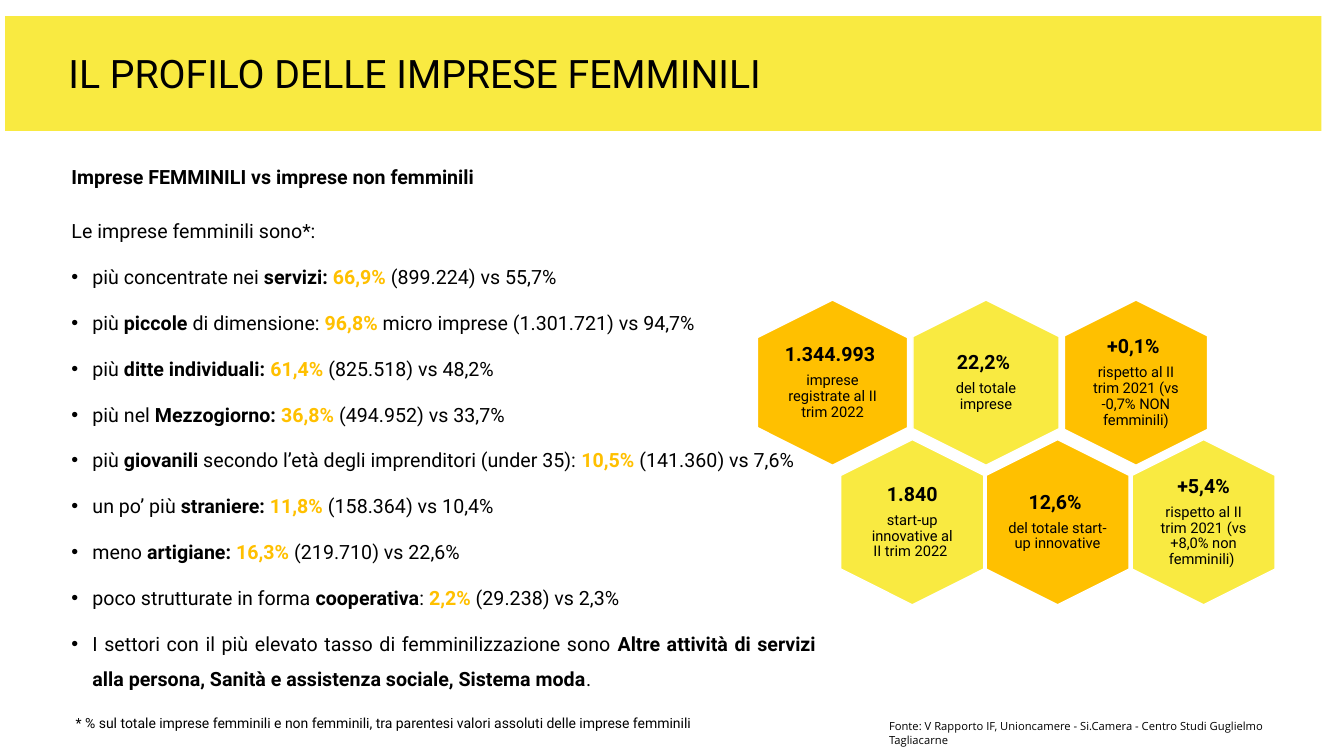
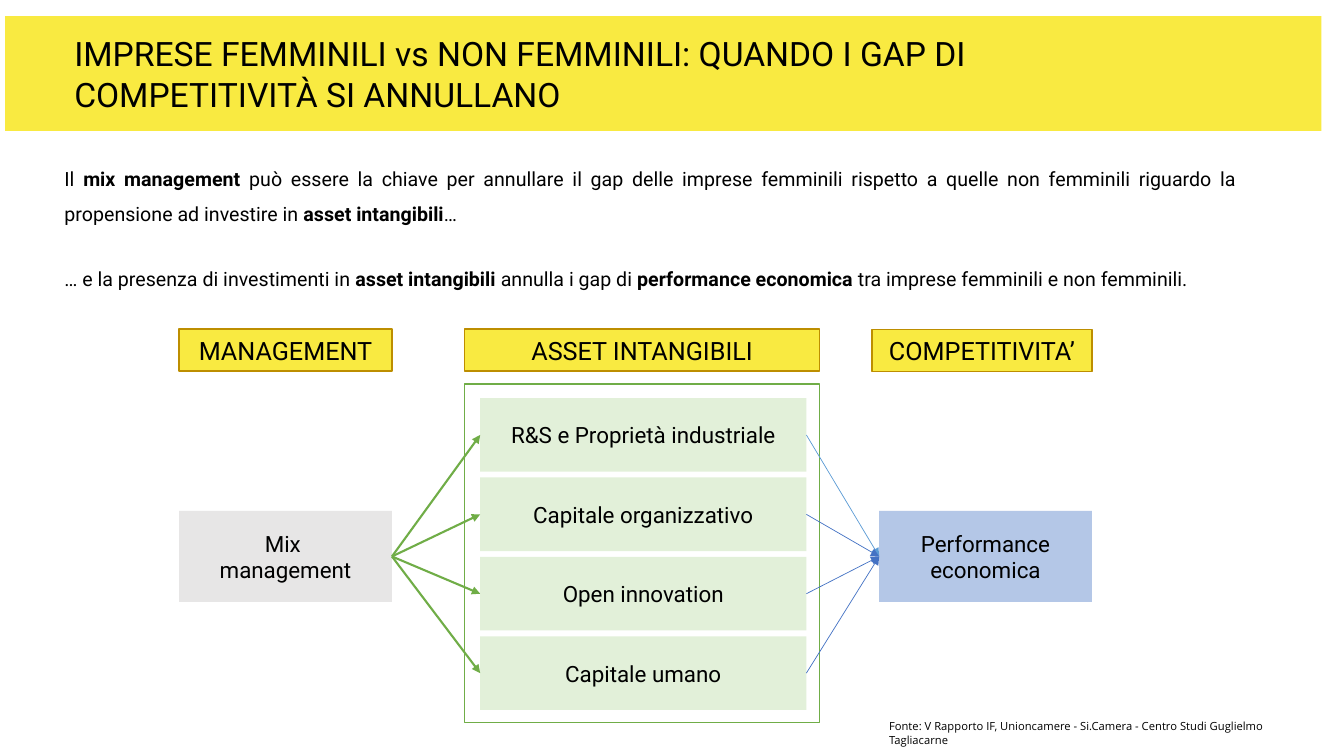
import pptx
import pptx.dml.color
import pptx.enum.shapes
import pptx.enum.text
import pptx.oxml
import pptx.util
from pptx.oxml.ns import qn

Pt = pptx.util.Pt
RGB = pptx.dml.color.RGBColor
SHAPE = pptx.enum.shapes.MSO_SHAPE
ALIGN = pptx.enum.text.PP_ALIGN
MIDDLE = pptx.enum.text.MSO_ANCHOR.MIDDLE

BLACK = RGB(0x00, 0x00, 0x00)
WHITE = RGB(0xFF, 0xFF, 0xFF)
YELLOW = RGB(0xF9, 0xEA, 0x41)
AMBER = RGB(0xFF, 0xC0, 0x00)
OCHRE = RGB(0xBD, 0x8E, 0x00)
GREEN = RGB(0x70, 0xAD, 0x47)
PALE_GREEN = RGB(0xE2, 0xF0, 0xD9)
GREY = RGB(0xE7, 0xE6, 0xE6)
PALE_BLUE = RGB(0xB4, 0xC7, 0xE7)
SKY = RGB(0x5B, 0x9B, 0xD5)
BLUE = RGB(0x44, 0x72, 0xC4)

# Run styles: (bold, colour)
PLAIN, BOLD, FIGURE = (False, BLACK), (True, BLACK), (True, AMBER)


def add_box(s, x, y, w, h, kind=None, fill=None, line=None, margins=(7.2, 3.6)):
    """Add a shape of the given kind, or a text box when there is none."""
    if kind is None:
        sp = s.shapes.add_textbox(Pt(x), Pt(y), Pt(w), Pt(h))
    else:
        sp = s.shapes.add_shape(kind, Pt(x), Pt(y), Pt(w), Pt(h))
        sp.shadow.inherit = False
        if fill is None:
            sp.fill.background()
        else:
            sp.fill.solid()
            sp.fill.fore_color.rgb = fill
        if line is None:
            sp.line.fill.background()
        else:
            sp.line.color.rgb = line
            sp.line.width = Pt(1)
        sp.text_frame.vertical_anchor = MIDDLE
    tf = sp.text_frame
    tf.word_wrap = True
    tf.margin_left = tf.margin_right = Pt(margins[0])
    tf.margin_top = tf.margin_bottom = Pt(margins[1])
    return sp


def add_text(tf, size, *runs, align=ALIGN.LEFT, spacing=1.0, after=0, font="Roboto"):
    """Add a paragraph of (text, style) runs, using the empty first one if it is free."""
    p = tf.paragraphs[0] if not tf.paragraphs[0].runs else tf.add_paragraph()
    p.alignment = align
    p.line_spacing = spacing
    p.space_after = Pt(after)
    for text, (bold, color) in runs:
        r = p.add_run()
        r.text = text
        r.font.name = font
        r.font.size = Pt(size)
        r.font.bold = bold
        r.font.color.rgb = color
    return p


prs = pptx.Presentation()
prs.slide_width, prs.slide_height = Pt(960), Pt(540)

# Yellow band, title and source line on both slides
TITLES = [
    ("IL PROFILO DELLE IMPRESE FEMMINILI", 28, 41.8, 31.7),
    ("IMPRESE FEMMINILI vs NON FEMMINILI: QUANDO I GAP DI COMPETITIVITÀ SI ANNULLANO", 24, 46, 20.2),
]
SOURCE = "Fonte: V Rapporto IF, Unioncamere - Si.Camera - Centro Studi Guglielmo Tagliacarne"
for title, size, x, y in TITLES:
    s = prs.slides.add_slide(prs.slide_layouts[6])
    add_box(s, 3.6, 11.5, 940.3, 82, SHAPE.RECTANGLE, YELLOW)
    add_text(add_box(s, x, y, 828, 60).text_frame, size, (title, PLAIN))
    add_text(add_box(s, 628, 510.5, 316, 17).text_frame, 8, (SOURCE, PLAIN), font="Open Sans")
profile, gaps = prs.slides

# Slide 1: comparison list
s = profile
tf = add_box(s, 44, 113, 318, 24).text_frame
add_text(tf, 14, ("Imprese FEMMINILI vs imprese non femminili", BOLD), spacing=1.07)

BULLETS = [
    [("più concentrate nei ", PLAIN), ("servizi: ", BOLD), ("66,9% ", FIGURE),
     ("(899.224) vs 55,7%", PLAIN)],
    [("più ", PLAIN), ("piccole", BOLD), (" di dimensione: ", PLAIN), ("96,8%", FIGURE),
     (" micro imprese (1.301.721) vs 94,7%", PLAIN)],
    [("più ", PLAIN), ("ditte individuali: ", BOLD), ("61,4% ", FIGURE),
     ("(825.518) vs 48,2%", PLAIN)],
    [("più nel ", PLAIN), ("Mezzogiorno: ", BOLD), ("36,8% ", FIGURE),
     ("(494.952) vs 33,7%", PLAIN)],
    [("più ", PLAIN), ("giovanili", BOLD),
     (" secondo l’età degli imprenditori (under 35): ", PLAIN), ("10,5% ", FIGURE),
     ("(141.360) vs 7,6%", PLAIN)],
    [("un po’ più ", PLAIN), ("straniere: ", BOLD), ("11,8% ", FIGURE),
     ("(158.364) vs 10,4%", PLAIN)],
    [("meno ", PLAIN), ("artigiane: ", BOLD), ("16,3% ", FIGURE),
     ("(219.710) vs 22,6%", PLAIN)],
    [("poco strutturate in forma ", PLAIN), ("cooperativa", BOLD), (": ", PLAIN),
     ("2,2%", FIGURE), (" (29.238) vs 2,3%", PLAIN)],
    [("I settori con il più elevato tasso di femminilizzazione sono ", PLAIN),
     ("Altre attività di servizi alla persona, Sanità e assistenza sociale, Sistema moda", BOLD),
     (".", PLAIN)],
]
body = dict(align=ALIGN.JUSTIFY, spacing=1.5, after=7.5)
tf = add_box(s, 44, 144.7, 546, 387).text_frame
add_text(tf, 14, ("Le imprese femminili sono*:", PLAIN), **body)
for runs in BULLETS:
    p = add_text(tf, 14, *runs, **body)
    pPr = p._p.get_or_add_pPr()
    pPr.set("marL", str(Pt(15)))
    pPr.set("indent", str(-Pt(15)))
    bullet_font = pptx.oxml.parse_xml(
        '<a:buFont xmlns:a="http://schemas.openxmlformats.org/drawingml/2006/main" typeface="Arial"/>')
    pPr.append(bullet_font)
    pPr.append(pPr.makeelement(qn("a:buChar"), {"char": "•"}))
p = add_text(tf, 10, ("* % sul totale imprese femminili e non femminili, tra parentesi "
                      "valori assoluti delle imprese femminili", PLAIN), **body)
p.space_before = Pt(3.5)
p._p.get_or_add_pPr().set("marL", str(Pt(3)))

# Slide 1: honeycomb, (centre x, centre y, width, fill, figure, caption)
TOP_ROW, BOTTOM_ROW, HEX_HEIGHT = 273.3, 373, 118
HEXAGONS = [
    (594.7, TOP_ROW, 107.3, AMBER, "1.344.993 ", "imprese registrate al II trim 2022"),
    (704.3, TOP_ROW, 104.4, YELLOW, "22,2% ", "del totale imprese"),
    (811.4, TOP_ROW, 102.2, AMBER, "+0,1% ", "rispetto al II trim 2021 (vs -0,7% NON femminili)"),
    (651.6, BOTTOM_ROW, 102.2, YELLOW, "1.840", "start-up innovative al II trim 2022 "),
    (755.4, BOTTOM_ROW, 102.2, AMBER, "12,6% ", "del totale start-up innovative"),
    (859.7, BOTTOM_ROW, 102.2, YELLOW, "+5,4%", "rispetto al II trim 2021 (vs +8,0% non femminili) "),
]
for cx, cy, width, fill, figure, caption in HEXAGONS:
    sp = add_box(s, cx - HEX_HEIGHT / 2, cy - width / 2, HEX_HEIGHT, width, SHAPE.HEXAGON, fill, WHITE)
    sp.adjustments[0] = 0.25
    sp.rotation = 90
    inset = 4.3 if fill == YELLOW else 0
    sp = add_box(s, cx - 35.5, cy - 40.5, 71, 81, margins=(inset, inset))
    sp.text_frame.vertical_anchor = MIDDLE
    for text, size, style in ((figure, 14, BOLD), (caption, 10.5, PLAIN)):
        add_text(sp.text_frame, size, (text, style), align=ALIGN.CENTER, spacing=0.9, after=5)

# Slide 2: introduction
s = gaps
tf = add_box(s, 46, 111, 837.5, 102, margins=(0, 0)).text_frame
add_text(tf, 14, ("Il ", PLAIN), ("mix management ", BOLD),
         ("può essere la chiave per annullare il gap delle imprese femminili rispetto a quelle "
          "non femminili riguardo la propensione ad investire in ", PLAIN),
         ("asset intangibili", BOLD), ("…", PLAIN), **body)
p = add_text(tf, 14, ("… e la presenza di investimenti in ", PLAIN), ("asset intangibili ", BOLD),
             ("annulla i gap di ", PLAIN), ("performance economica ", BOLD),
             ("tra imprese femminili e non femminili.", PLAIN), align=ALIGN.JUSTIFY, after=7.5)
p.space_before = Pt(21.5)

# Slide 2: diagram
ASSETS = ["R&S e Proprietà industriale", "Capitale organizzativo", "Open innovation", "Capitale umano"]
ASSET_X, ASSET_W, ASSET_Y, ASSET_H, ASSET_STEP = 343, 233, 284.4, 52.6, 56.7
END_Y, END_W, END_H = 365, 152, 65
MIX_X, PERFORMANCE_X = 128, 628

add_box(s, 332, 274.3, 253.4, 242, SHAPE.RECTANGLE, line=GREEN)
BLOCKS = [
    (MIX_X, 235, END_W, 30, YELLOW, OCHRE, 18, ["MANAGEMENT"]),
    (332, 235, 253.4, 30, YELLOW, OCHRE, 18, ["ASSET INTANGIBILI"]),
    (623, 235.4, 157, 30, YELLOW, OCHRE, 18, ["COMPETITIVITA’"]),
    (MIX_X, END_Y, END_W, END_H, GREY, None, 16, ["Mix ", "management"]),
    (PERFORMANCE_X, END_Y, END_W, END_H, PALE_BLUE, None, 16, ["Performance economica"]),
]
for i, asset in enumerate(ASSETS):
    BLOCKS.append((ASSET_X, ASSET_Y + i * ASSET_STEP, ASSET_W, ASSET_H, PALE_GREEN, None, 16, [asset]))
for x, y, w, h, fill, line, size, lines in BLOCKS:
    tf = add_box(s, x, y, w, h, SHAPE.RECTANGLE, fill, line).text_frame
    for text in lines:
        add_text(tf, size, (text, PLAIN), align=ALIGN.CENTER)

end_mid = END_Y + END_H / 2
for i in range(len(ASSETS)):
    asset_mid = ASSET_Y + i * ASSET_STEP + ASSET_H / 2
    arrows = [
        (MIX_X + END_W, end_mid, ASSET_X, asset_mid, GREEN, 1.5),
        (ASSET_X + ASSET_W, asset_mid, PERFORMANCE_X, end_mid, BLUE if i else SKY, 0.5),
    ]
    for x1, y1, x2, y2, color, width in arrows:
        arrow = s.shapes.add_connector(pptx.enum.shapes.MSO_CONNECTOR.STRAIGHT,
                                       Pt(x1), Pt(y1), Pt(x2), Pt(y2))
        arrow.line.color.rgb = color
        arrow.line.width = Pt(width)
        ln = arrow.line._get_or_add_ln()
        ln.append(ln.makeelement(qn("a:tailEnd"), {"type": "triangle"}))
        spPr = arrow._element.spPr
        spPr.append(spPr.makeelement(qn("a:effectLst"), {}))

prs.save("out.pptx")
